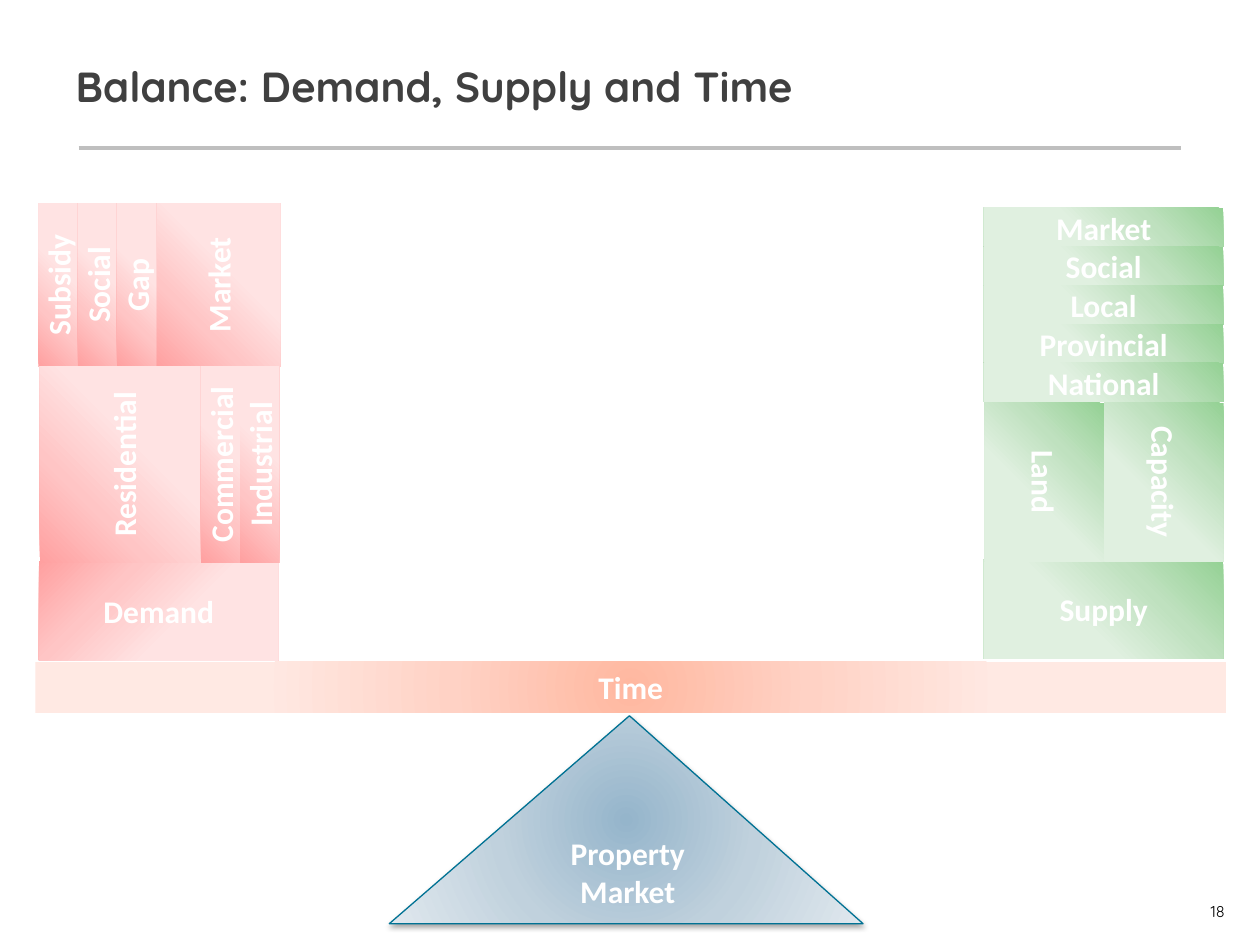
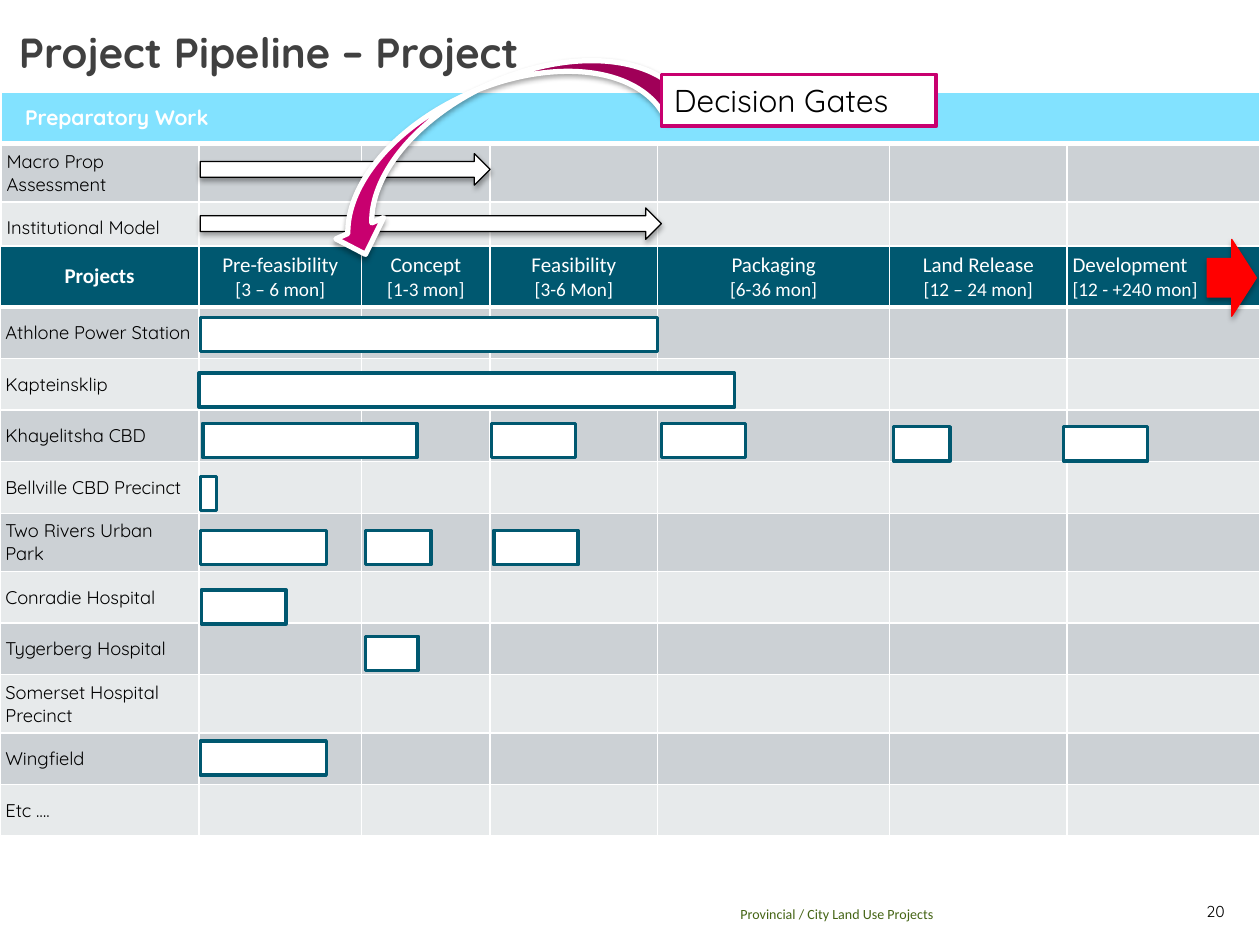
from lxml import etree
from pptx import Presentation
from pptx.dml.color import RGBColor
from pptx.enum.shapes import MSO_CONNECTOR, MSO_SHAPE
from pptx.enum.text import MSO_ANCHOR, PP_ALIGN
from pptx.oxml.ns import qn
from pptx.util import Pt

RECT, TRIANGLE = MSO_SHAPE.RECTANGLE, MSO_SHAPE.ISOSCELES_TRIANGLE
RIGHT_ARROW, CURVED_ARROW = MSO_SHAPE.RIGHT_ARROW, MSO_SHAPE.CURVED_RIGHT_ARROW
LEFT, CENTER, RIGHT = PP_ALIGN.LEFT, PP_ALIGN.CENTER, PP_ALIGN.RIGHT
TOP, MIDDLE, BOTTOM = MSO_ANCHOR.TOP, MSO_ANCHOR.MIDDLE, MSO_ANCHOR.BOTTOM

WHITE = RGBColor(0xFF, 0xFF, 0xFF)
BLACK = RGBColor(0, 0, 0)
TITLE_GREY = RGBColor(0x40, 0x40, 0x40)
RULE_GREY = RGBColor(0xBF, 0xBF, 0xBF)
FOOTER_GREEN = RGBColor(0x44, 0x64, 0x14)
EDGE_BLUE = RGBColor(0x00, 0x72, 0x94)
TEAL = RGBColor(0x00, 0x58, 0x70)
CYAN = RGBColor(0x82, 0xE2, 0xFF)
MAGENTA = RGBColor(0xC8, 0x00, 0x6F)
RED = RGBColor(0xFF, 0, 0)
BAND_DARK = RGBColor(0xCC, 0xD1, 0xD5)
BAND_LIGHT = RGBColor(0xE7, 0xEA, 0xEB)

# Gradients: stops as (percent, colour), then the angle, or None for circular
DEMAND = ([(0, "FFA0A0"), (30, "FFC5C5"), (60, "FFE3E3")], 45)
SUPPLY = ([(0, "94D194"), (31, "BFE1BF"), (60, "E0F0E0")], 135)
TIME = ([(0, "FFB8A0"), (30, "FFD2C5"), (62, "FFE9E3")], None)
MARKET = ([(0, "95B5CB"), (50, "C0D1DD"), (100, "E0E8EE")], None)

HEAD, BODY = "Quicksand", "Calibri"


def write(p, text, size, color, font=HEAD, bold=False, align=LEFT):
    p.alignment = align
    r = p.add_run()
    r.text = text
    r.font.size = Pt(size)
    r.font.name = font
    r.font.bold = bold
    r.font.color.rgb = color


def add_shape(slide, kind, box, fill, line=None, weight=0.75, shadow=False, turn=0):
    """Add a shape whose turned outline fills box; quarter turns swap its sides."""
    x, y, w, h = box
    if turn in (90, 270):
        x, y, w, h = x + (w - h) / 2, y + (h - w) / 2, h, w
    sp = slide.shapes.add_shape(kind, Pt(x), Pt(y), Pt(w), Pt(h))
    sp.rotation = turn
    spPr = sp._element.spPr
    if isinstance(fill, RGBColor):
        sp.fill.solid()
        sp.fill.fore_color.rgb = fill
    else:
        stops, angle = fill
        sp.fill.gradient()
        grad = spPr.find(qn("a:gradFill"))
        for child in list(grad):
            grad.remove(child)
        grad.set("rotWithShape", "1")
        gs_list = etree.SubElement(grad, qn("a:gsLst"))
        for percent, color in stops:
            gs = etree.SubElement(gs_list, qn("a:gs"), pos=str(percent * 1000))
            etree.SubElement(gs, qn("a:srgbClr"), val=color)
        if angle is None:
            circle = etree.SubElement(grad, qn("a:path"), path="circle")
            etree.SubElement(circle, qn("a:fillToRect"), l="50000", t="50000", r="50000", b="50000")
        else:
            etree.SubElement(grad, qn("a:lin"), ang=str(angle * 60000), scaled="0")
    if line is None:
        sp.line.fill.background()
    else:
        sp.line.color.rgb = line
        sp.line.width = Pt(weight)
    sp.shadow.inherit = False
    if shadow:
        outer = etree.SubElement(spPr.find(qn("a:effectLst")), qn("a:outerShdw"),
                                 blurRad=str(Pt(3.1)), dist=str(Pt(1.8)),
                                 dir="5400000", rotWithShape="0")
        color = etree.SubElement(outer, qn("a:srgbClr"), val="000000")
        etree.SubElement(color, qn("a:alpha"), val="35000")
    return sp


prs = Presentation()
prs.slide_width, prs.slide_height = Pt(720), Pt(540)
layout = prs.slide_layouts[5]

# Shared frame: title, page number, and a rule that lives on the layout
slides = []
for title, x, y, number in (("Balance: Demand, Supply and Time", 36, 21.6, "18"),
                            ("Project Pipeline – Project", 3.6, 2.2, "20")):
    s = prs.slides.add_slide(layout)
    sp = s.shapes.title
    sp.left, sp.top, sp.width, sp.height = Pt(x), Pt(y), Pt(648), Pt(54.7)
    sp.text_frame.vertical_anchor = MIDDLE
    write(sp.text_frame.paragraphs[0], title, 24, TITLE_GREY, bold=True)
    tf = s.shapes.add_textbox(Pt(659.5), Pt(509), Pt(40.3), Pt(18)).text_frame
    tf.word_wrap = True
    tf.vertical_anchor = MIDDLE
    tf.margin_left = tf.margin_top = Pt(5.8)
    tf.margin_right = tf.margin_bottom = 0
    write(tf.paragraphs[0], number, 9, BLACK, align=RIGHT)
    slides.append(s)
balance, pipeline = slides

rule = balance.shapes.add_connector(MSO_CONNECTOR.STRAIGHT, Pt(45), Pt(84.5), Pt(675), Pt(84.5))
rule.line.color.rgb = RULE_GREY
rule.line.width = Pt(2)
etree.SubElement(rule._element.spPr, qn("a:effectLst"))
layout.shapes._spTree.append(rule._element)

# Balance: (label, box, gradient, turn)
blocks = [("Demand", (22.3, 320.4, 136.8, 56.9), DEMAND, 0),
          ("Supply", (562.3, 319.7, 136.8, 56.9), SUPPLY, 0),
          ("Time", (20.2, 378, 680.4, 29.4), TIME, 0)]
for label, x, w in (("Market", 89, 71.3), ("Subsidy", 22, 22.4),
                    ("Social", 44.6, 22.4), ("Gap", 66.8, 22.4)):
    blocks.append((label, (x, 116, w, 93.6), DEMAND, 270))
for label, x, w in (("Residential", 22.7, 95.8), ("Commercial", 114.8, 22.4),
                    ("Industrial", 137.2, 22.4)):
    blocks.append((label, (x, 209.2, w, 112.3), DEMAND, 270))
for i, label in enumerate(("Land", "Capacity")):
    blocks.append((label, (562.5 + 68.4 * i, 230, 68.4, 90.7), SUPPLY, 90))
for i, label in enumerate(("Market", "Social", "Local", "Provincial", "National")):
    blocks.append((label, (562.3, 118.8 + 22.15 * i, 136.8, 22.3), SUPPLY, 0))

for label, box, fill, turn in blocks:
    sp = add_shape(balance, RECT, box, fill, turn=turn)
    if turn == 90:
        sp._element.spPr.xfrm.set("flipH", "1")
    tf = sp.text_frame
    tf.word_wrap = True
    tf.vertical_anchor = TOP if label == "Time" else MIDDLE
    write(tf.paragraphs[0], label, 18, WHITE, BODY, True, CENTER)

sp = add_shape(balance, TRIANGLE, (222.5, 409, 270.7, 118.8), MARKET, EDGE_BLUE, shadow=True)
sp.adjustments[0] = 0.507
tf = sp.text_frame
tf.vertical_anchor = MIDDLE
write(tf.paragraphs[0], "Property", 18, WHITE, BODY, True, CENTER)
write(tf.add_paragraph(), "Market", 18, WHITE, BODY, True, CENTER)

# Pipeline: two tables on the same column grid
phases = [("Pre-feasibility", "[3 – 6 mon]"), ("Concept", "[1-3 mon]"),
          ("Feasibility", "[3-6 Mon]"), ("Packaging", "[6-36 mon]"),
          ("Land Release", "[12 – 24 mon]"), ("Development", "[12 - +240 mon]")]
preparation = ["Macro Prop Assessment", "Institutional Model"]
projects = ["Athlone Power Station", "Kapteinsklip", "Khayelitsha CBD", "Bellville CBD Precinct",
            "Two Rivers Urban Park", "Conradie Hospital", "Tygerberg Hospital",
            "Somerset Hospital Precinct", "Wingfield", "Etc …."]
two_line = ("Macro Prop Assessment", "Two Rivers Urban Park", "Somerset Hospital Precinct")
phase_widths = [92.9, 73.4, 95.8, 132.5, 101.5, 110.1]

tables = []
for x, y, first_width, head_height, head_fill, labels in (
        (0.7, 52.6, 113, 29.5, CYAN, preparation),
        (0, 140.5, 113.8, 34.9, TEAL, projects)):
    heights = [head_height] + [33.3 if label in two_line else 29.5 for label in labels]
    widths = [first_width] + phase_widths
    table = pipeline.shapes.add_table(len(heights), len(widths), Pt(x), Pt(y),
                                      Pt(sum(widths)), Pt(sum(heights))).table
    table.first_row = table.horz_banding = False
    for column, width in zip(table.columns, widths):
        column.width = Pt(width)
    for i, height in enumerate(heights):
        table.rows[i].height = Pt(height)
        for cell in table.rows[i].cells:
            tcPr = cell._tc.get_or_add_tcPr()
            for side in ("lnL", "lnR", "lnT", "lnB"):
                weight = 3 if i == 0 and side == "lnB" else 1
                ln = etree.SubElement(tcPr, qn("a:" + side), w=str(Pt(weight)))
                etree.SubElement(etree.SubElement(ln, qn("a:solidFill")), qn("a:srgbClr"), val="FFFFFF")
            cell.fill.solid()
            cell.fill.fore_color.rgb = head_fill if i == 0 else (BAND_LIGHT, BAND_DARK)[i % 2]
            cell.vertical_anchor = MIDDLE
            cell.margin_left = cell.margin_right = Pt(3.1)
        if i:
            write(table.cell(i, 0).text_frame.paragraphs[0], labels[i - 1], 10.5, BLACK)
    tables.append(table)

preparation_table, project_table = tables
head = preparation_table.cell(0, 0)
head.merge(preparation_table.cell(0, 6))
head.margin_left = Pt(13.6)
write(head.text_frame.paragraphs[0], "Preparatory Work", 12, WHITE, bold=True)

write(project_table.cell(0, 0).text_frame.paragraphs[0], "Projects", 12, WHITE, BODY, True, CENTER)
for col, (phase, duration) in enumerate(phases, 1):
    tf = project_table.cell(0, col).text_frame
    align = LEFT if phase == "Development" else CENTER
    write(tf.paragraphs[0], phase, 12, WHITE, BODY, align=align)
    write(tf.add_paragraph(), duration, 11, WHITE, BODY, align=align)

tf = pipeline.shapes.add_textbox(Pt(318.2), Pt(509), Pt(326.2), Pt(18)).text_frame
tf.word_wrap = True
tf.vertical_anchor = BOTTOM
tf.margin_left = tf.margin_bottom = 0
tf.margin_top = tf.margin_right = Pt(5.8)
write(tf.paragraphs[0], "Provincial / City Land Use Projects", 8, FOOTER_GREEN, BODY, align=CENTER)

add_shape(pipeline, RIGHT_ARROW, (689.8, 136.8, 28.1, 43.9), RED, RED, shadow=True)
for y, w in ((87.8, 165.6), (118.8, 263.5)):
    add_shape(pipeline, RIGHT_ARROW, (114.5, y, w, 18), WHITE, BLACK, shadow=True)

# Progress bars: top, then (left, width) of each bar
bars = [(181.4, [(114.5, 261.4)]),
        (213.1, [(113.8, 306)]),
        (241.9, [(115.9, 122.4), (280.8, 48.2), (378, 48.2)]),
        (243.8, [(510.5, 32.4), (607.7, 48.2)]),
        (272.2, [(114.5, 9.4)]),
        (303.1, [(114.5, 72), (208.8, 37.4), (282.2, 48.2)]),
        (337, [(115.2, 48.2)]),
        (363.6, [(208.8, 30.2)]),
        (423.4, [(114.5, 72)])]
for y, spans in bars:
    for x, w in spans:
        add_shape(pipeline, RECT, (x, y, w, 19.6), WHITE, TEAL, 2)

add_shape(pipeline, CURVED_ARROW, (252.7, -29.5, 59.8, 218.2), MAGENTA, WHITE, 3, True, 65.9)
sp = add_shape(pipeline, RECT, (378, 42.5, 157, 29.7), WHITE, MAGENTA, 2)
tf = sp.text_frame
tf.word_wrap = True
tf.vertical_anchor = TOP
write(tf.paragraphs[0], "Decision Gates", 18, BLACK)

prs.save("out.pptx")
